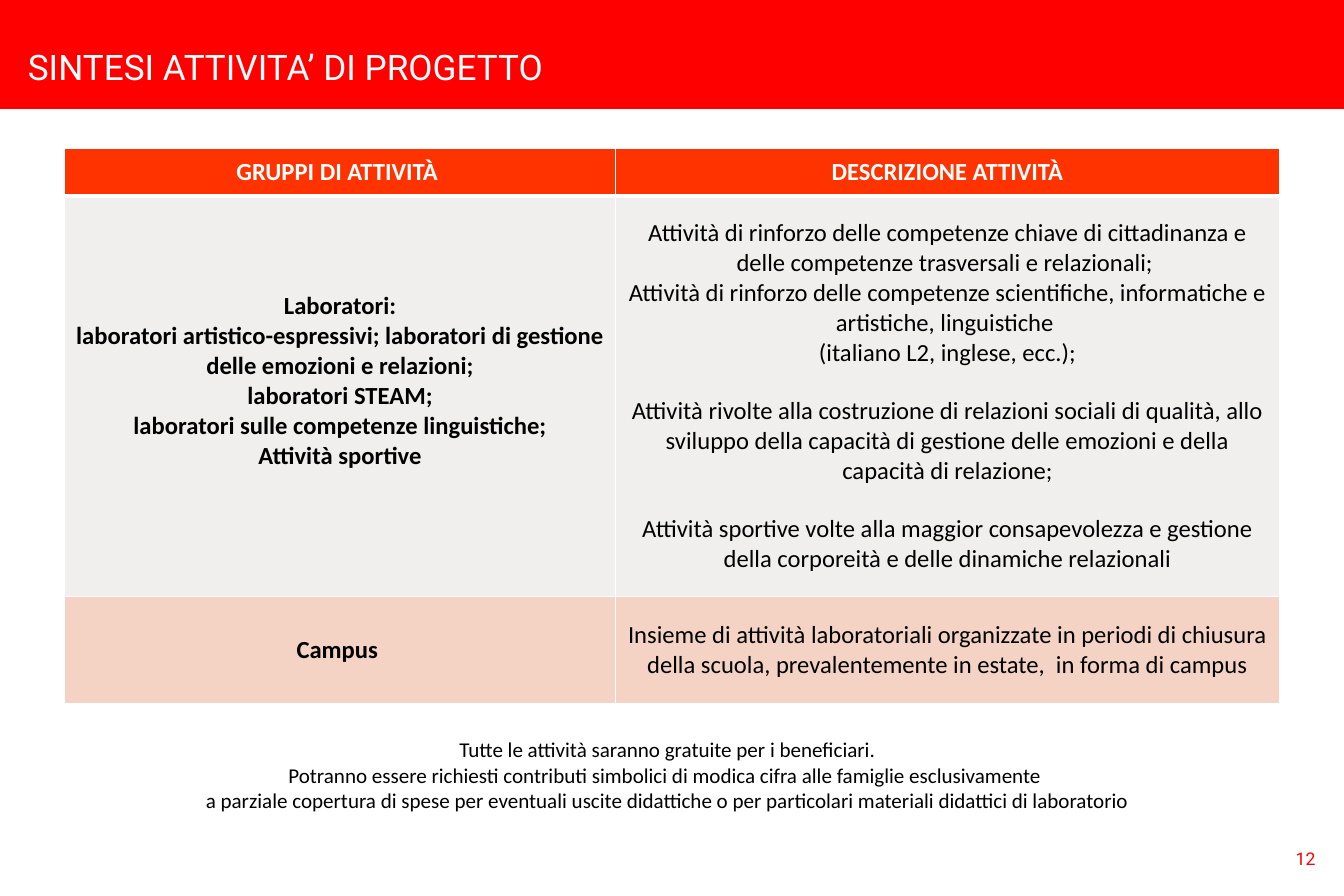
import pptx
import pptx.util
import pptx.dml.color
import pptx.enum.shapes
import pptx.enum.text
import pptx.oxml
import pptx.oxml.ns

Inches = pptx.util.Inches
Pt = pptx.util.Pt
CENTER = pptx.enum.text.PP_ALIGN.CENTER
LEFT = pptx.enum.text.PP_ALIGN.LEFT


def rgb(hex_color):
    return pptx.dml.color.RGBColor.from_string(hex_color)


def write(frame, lines, font, size, color, bold=False, align=CENTER):
    frame.text = "\n".join(lines)
    for paragraph in frame.paragraphs:
        paragraph.alignment = align
        for run in paragraph.runs:
            run.font.name = font
            run.font.size = Pt(size)
            run.font.bold = bold
            run.font.color.rgb = rgb(color)


presentation = pptx.Presentation()
presentation.slide_width = Inches(10.63)
presentation.slide_height = Inches(7.09)
slide = presentation.slides.add_slide(presentation.slide_layouts[5])

# Red band, placed behind the title
band = slide.shapes.add_shape(
    pptx.enum.shapes.MSO_SHAPE.RECTANGLE, Inches(-0.01), 0, Inches(10.65), Inches(0.86))
band.shadow.inherit = False
band.fill.solid()
band.fill.fore_color.rgb = rgb("FF0000")
band.line.color.rgb = rgb("FF0000")
band.line.width = Pt(0.75)
slide.shapes.title._element.addprevious(band._element)

# Title
title = slide.shapes.title
title.left, title.top = Inches(0.12), Inches(0.31)
title.width, title.height = Inches(8.06), Inches(0.44)
title.text_frame.vertical_anchor = pptx.enum.text.MSO_ANCHOR.TOP
title.text_frame.auto_size = pptx.enum.text.MSO_AUTO_SIZE.NONE
write(title.text_frame, ["SINTESI ATTIVITA’ DI PROGETTO"], "Roboto", 20, "FFFFFF", align=LEFT)

# Activity table
activities = [
    (["GRUPPI DI ATTIVITÀ "], ["DESCRIZIONE ATTIVITÀ"]),
    (["Laboratori:",
      "laboratori artistico-espressivi; laboratori di gestione delle emozioni e relazioni;",
      "laboratori STEAM;",
      "laboratori sulle competenze linguistiche;",
      "Attività sportive"],
     ["Attività di rinforzo delle competenze chiave di cittadinanza e delle competenze "
      "trasversali e relazionali; ",
      "Attività di rinforzo delle competenze scientifiche, informatiche e artistiche, linguistiche ",
      "(italiano L2, inglese, ecc.);",
      "Attività rivolte alla costruzione di relazioni sociali di qualità, allo sviluppo della "
      "capacità di gestione delle emozioni e della capacità di relazione;",
      "Attività sportive volte alla maggior consapevolezza e gestione della corporeità e delle "
      "dinamiche relazionali"]),
    (["Campus "],
     ["Insieme di attività laboratoriali organizzate in periodi di chiusura della scuola, "
      "prevalentemente in estate,  in forma di campus"]),
]
row_heights = [0.38, 3.17, 0.85]
row_fills = ["FF3300", "F0EFEE", "F4D3C4"]
column_widths = [4.36, 5.25]

table = slide.shapes.add_table(
    len(activities), 2, Inches(0.51), Inches(1.17),
    Inches(sum(column_widths)), Inches(sum(row_heights))).table
for column, width in zip(table.columns, column_widths):
    column.width = Inches(width)

for row_index, row_texts in enumerate(activities):
    table.rows[row_index].height = Inches(row_heights[row_index])
    is_header = row_index == 0
    for column_index, lines in enumerate(row_texts):
        cell = table.cell(row_index, column_index)
        cell.vertical_anchor = pptx.enum.text.MSO_ANCHOR.MIDDLE
        cell.margin_left = cell.margin_right = Inches(0.05)
        cell.margin_top = cell.margin_bottom = 0
        cell.fill.solid()
        cell.fill.fore_color.rgb = rgb(row_fills[row_index])
        write(cell.text_frame, lines, "Calibri", 14,
              "FFFFFF" if is_header else "000000", bold=is_header or column_index == 0)

        # White borders, thicker under the header
        thick_side = {0: "lnB", 1: "lnT"}.get(row_index)
        for position, side in enumerate(["lnL", "lnR", "lnT", "lnB"]):
            points = 3 if side == thick_side else 1
            border = pptx.oxml.parse_xml(
                f'<a:{side} {pptx.oxml.ns.nsdecls("a")} w="{Pt(points)}"><a:solidFill>'
                f'<a:srgbClr val="FFFFFF"/></a:solidFill></a:{side}>')
            cell._tc.get_or_add_tcPr().insert(position, border)

# Workshops sit slightly above the middle; descriptions form three groups
table.cell(1, 0).margin_bottom = Inches(0.24)
for paragraph in table.cell(1, 1).text_frame.paragraphs[3:]:
    paragraph.space_before = Pt(16)

# Note on costs
note = slide.shapes.add_textbox(Inches(0.08), Inches(5.83), Inches(10.4), Inches(0.62)).text_frame
note.word_wrap = True
note.margin_left = note.margin_right = note.margin_top = note.margin_bottom = 0
write(note, [
    "Tutte le attività saranno gratuite per i beneficiari.",
    "Potranno essere richiesti contributi simbolici di modica cifra alle famiglie esclusivamente ",
    "a parziale copertura di spese per eventuali uscite didattiche o per particolari materiali "
    "didattici di laboratorio",
], "Calibri", 12, "000000")

# Page number
page_number = slide.shapes.add_textbox(Inches(10.15), Inches(6.66), Inches(0.47), Inches(0.27))
page_number.text_frame.word_wrap = True
write(page_number.text_frame, ["12"], "Roboto", 10, "FF0000", align=LEFT)

presentation.save("out.pptx")
